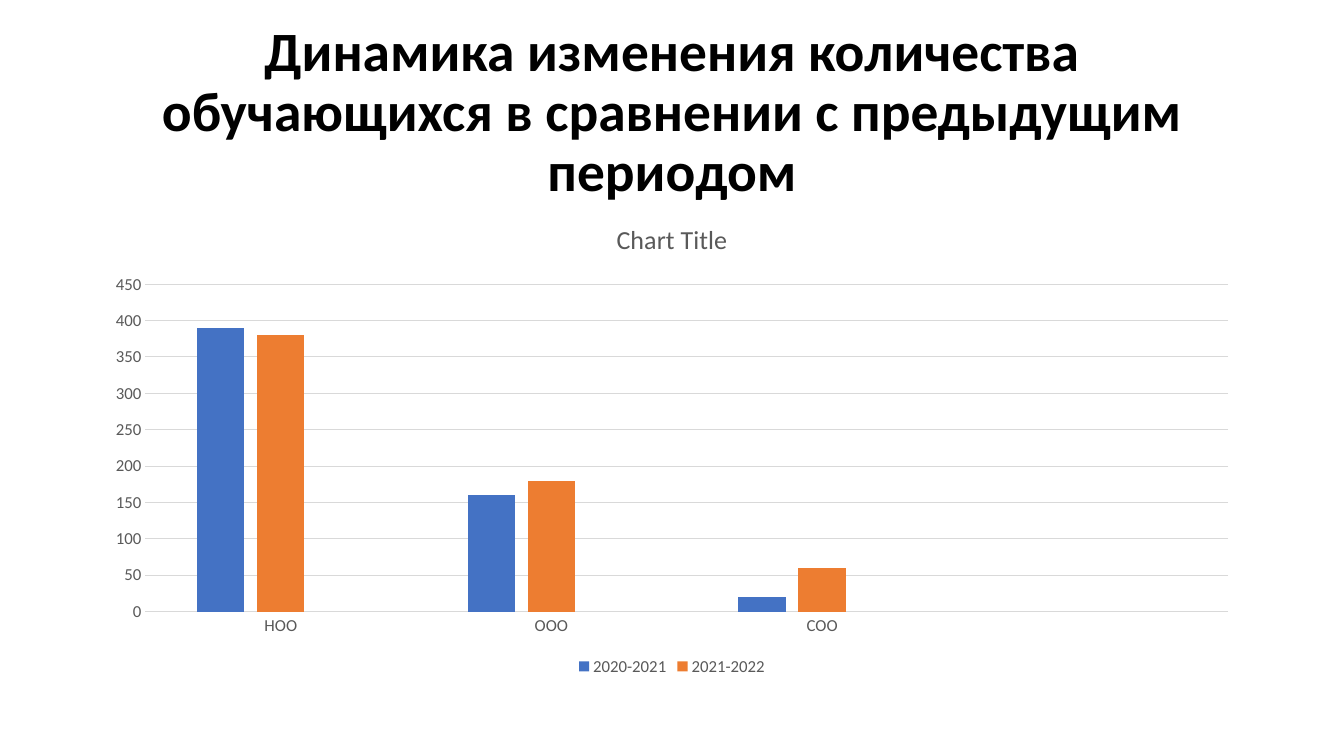
from dataclasses import dataclass

from lxml import etree
from pptx import Presentation
from pptx.chart.data import CategoryChartData
from pptx.dml.color import RGBColor
from pptx.enum.chart import XL_CHART_TYPE, XL_LEGEND_POSITION, XL_TICK_MARK
from pptx.enum.text import MSO_ANCHOR, MSO_AUTO_SIZE, PP_ALIGN
from pptx.oxml import parse_xml
from pptx.oxml.ns import nsdecls, qn
from pptx.util import Inches, Pt

TITLE = "Динамика изменения количества обучающихся в сравнении с предыдущим периодом"
CHART_TITLE = "Chart Title"
LEVELS = ["НОО", "ООО", "СОО", ""]
SERIES = [
    ("2020-2021", [390, 160, 20, None]),
    ("2021-2022", [380, 180, 60, None]),
    ("Series 3", [None] * 4),
]
HIDDEN_LEGEND_ENTRY = 2

COLUMN = XL_CHART_TYPE.COLUMN_CLUSTERED
BOTTOM = XL_LEGEND_POSITION.BOTTOM
NO_TICK = XL_TICK_MARK.NONE
CENTER = PP_ALIGN.CENTER
MIDDLE = MSO_ANCHOR.MIDDLE
NO_FIT = MSO_AUTO_SIZE.NONE


@dataclass(frozen=True)
class Theme:
    font: str = "Calibri"
    black: str = "000000"
    gray: str = "595959"
    grid: str = "D9D9D9"
    bars: tuple = ("4472C4", "ED7D31", "A5A5A5")
    title_size: float = 39.6
    chart_title_size: float = 18.6
    label_size: float = 12
    line_width: float = 0.75


THEME = Theme()
WIDTH, HEIGHT = 13.33, 7.5
MARGIN = 0.92
TITLE_TOP, TITLE_HEIGHT = 0.4, 1.45
CHART_TOP, CHART_HEIGHT = 2, 4.75


def style_font(font, size, color, bold=False):
    font.name = THEME.font
    font.size = Pt(size)
    font.bold = bold
    font.color.rgb = RGBColor.from_string(color)


def write_text(tf, text, size, color, bold=False, spacing=None):
    p = tf.paragraphs[0]
    p.alignment = CENTER
    p.line_spacing = spacing
    r = p.add_run()
    r.text = text
    style_font(r.font, size, color, bold)


def style_line(line):
    line.color.rgb = RGBColor.from_string(THEME.grid)
    line.width = Pt(THEME.line_width)


def box(top, height):
    return [Inches(v) for v in (MARGIN, top, WIDTH - 2 * MARGIN, height)]


def add_title(slide):
    sp = slide.shapes.title
    sp.left, sp.top, sp.width, sp.height = box(TITLE_TOP, TITLE_HEIGHT)
    tf = sp.text_frame
    tf.word_wrap = True
    tf.auto_size = NO_FIT
    tf.vertical_anchor = MIDDLE
    write_text(tf, TITLE, THEME.title_size, THEME.black, bold=True, spacing=0.9)


def hide_legend_entry(legend, index):
    entry = parse_xml(f'<c:legendEntry {nsdecls("c")}/>')
    for tag, value in (("c:idx", index), ("c:delete", 1)):
        etree.SubElement(entry, qn(tag)).set("val", str(value))
    legend._element.find(qn("c:legendPos")).addnext(entry)


def add_enrolment_chart(slide):
    data = CategoryChartData()
    data.categories = LEVELS
    for name, values in SERIES:
        data.add_series(name, values)
    chart = slide.shapes.add_chart(COLUMN, *box(CHART_TOP, CHART_HEIGHT), data).chart
    style_font(chart.font, THEME.label_size, THEME.gray)
    write_text(chart.chart_title.text_frame, CHART_TITLE,
               THEME.chart_title_size, THEME.gray)
    chart.chart_title.include_in_layout = False

    plot = chart.plots[0]
    plot.gap_width, plot.overlap = 219, -27
    plot.vary_by_categories = False
    for series, color in zip(plot.series, THEME.bars):
        series.format.fill.solid()
        series.format.fill.fore_color.rgb = RGBColor.from_string(color)

    for axis in (chart.category_axis, chart.value_axis):
        axis.major_tick_mark = axis.minor_tick_mark = NO_TICK
        style_font(axis.tick_labels.font, THEME.label_size, THEME.gray)
    style_line(chart.category_axis.format.line)
    chart.value_axis.format.line.fill.background()
    chart.value_axis.minimum_scale = 0
    chart.value_axis.maximum_scale = 450
    chart.value_axis.major_unit = 50
    style_line(chart.value_axis.major_gridlines.format.line)

    chart.has_legend = True
    chart.legend.position = BOTTOM
    chart.legend.include_in_layout = False
    style_font(chart.legend.font, THEME.label_size, THEME.gray)
    hide_legend_entry(chart.legend, HIDDEN_LEGEND_ENTRY)


def main():
    prs = Presentation()
    prs.slide_width, prs.slide_height = Inches(WIDTH), Inches(HEIGHT)
    slide = prs.slides.add_slide(prs.slide_layouts.get_by_name("Title Only"))
    add_title(slide)
    add_enrolment_chart(slide)
    prs.save("out.pptx")


if __name__ == "__main__":
    main()
